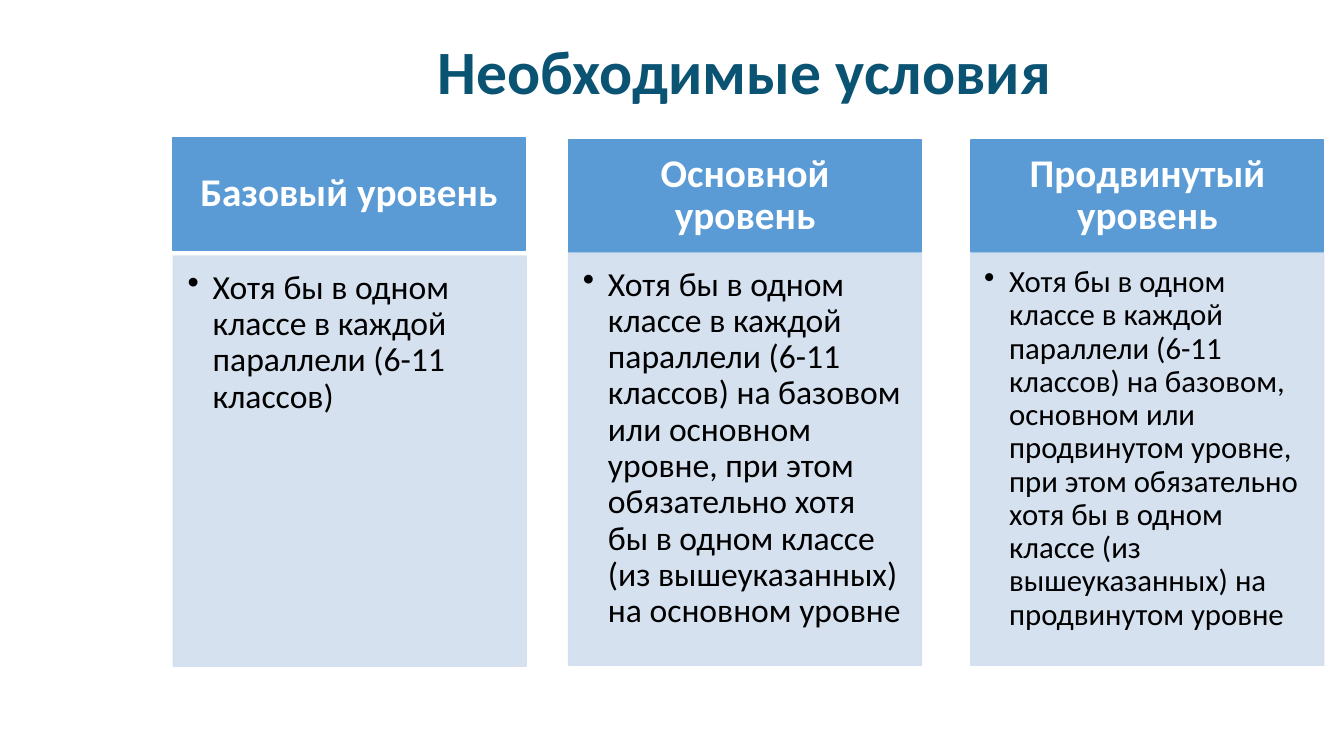
from pptx import Presentation
from pptx.dml.color import RGBColor
from pptx.enum.shapes import MSO_SHAPE
from pptx.enum.text import MSO_ANCHOR, PP_ALIGN
from pptx.oxml.ns import qn
from pptx.util import Inches, Pt
from lxml.etree import SubElement

TEAL = RGBColor(0x0A, 0x53, 0x73)
BLUE = RGBColor(0x5B, 0x9B, 0xD5)
PALE = RGBColor(0xD2, 0xDE, 0xEF)
WHITE = RGBColor(0xFF, 0xFF, 0xFF)
BLACK = RGBColor(0, 0, 0)

START = "Хотя бы в одном классе в каждой параллели (6-11 классов)"
MUST = "при этом обязательно хотя бы в одном классе (из вышеуказанных) на"
LEVELS = [
    ("Базовый уровень", START, (1.71, 1.37), (1.72, 2.54), 4.07, 24,
     (0.14, 0.14, 0.19, 0.21)),
    ("Основной уровень",
     f"{START} на базовом или основном уровне, {MUST} основном уровне",
     (5.64, 1.39), (5.64, 2.51), 4.09, 24, (0.14, 0.14, 0.19, 0.21)),
    ("Продвинутый уровень",
     f"{START} на базовом, основном или продвинутом уровне, {MUST} продвинутом уровне",
     (9.63, 1.39), (9.63, 2.51), 4.09, 22, (0.13, 0.13, 0.17, 0.19)),
]
WIDTH, HEAD = 3.5, 1.11


class Deck:
    """Draws the parts of the slide in one style."""

    face = "Calibri"

    def __init__(self):
        self.file = Presentation()
        self.file.slide_width = Inches(13.33)
        self.file.slide_height = Inches(7.5)
        self.slide = self.file.slides.add_slide(self.file.slide_layouts[6])

    def label(self, shape, text, size, color, bold, align, anchor, pad, bullet=False):
        frame = shape.text_frame
        frame.word_wrap = True
        frame.vertical_anchor = anchor
        (frame.margin_left, frame.margin_top,
         frame.margin_right, frame.margin_bottom) = map(Inches, pad)
        para = frame.paragraphs[0]
        para.text = text
        para.alignment = align
        para.line_spacing = 0.9
        if bullet:
            props = para._p.get_or_add_pPr()
            props.set("marL", str(Inches(0.25)))
            props.set("indent", str(Inches(-0.25)))
            SubElement(props, qn("a:buChar"), char="•")
        font = para.font
        font.name, font.size, font.bold = self.face, Pt(size), bold
        font.color.rgb = color

    def title(self, text, *place):
        box = self.slide.shapes.add_textbox(*map(Inches, place))
        self.label(box, text, 44, TEAL, True, PP_ALIGN.CENTER,
                   MSO_ANCHOR.MIDDLE, (0.1, 0.05, 0.1, 0.05))

    def block(self, color, *place):
        shape = self.slide.shapes.add_shape(MSO_SHAPE.RECTANGLE, *map(Inches, place))
        shape.shadow.inherit = False
        shape.fill.solid()
        shape.fill.fore_color.rgb = color
        shape.line.color.rgb = color
        shape.line.width = Pt(1)
        return shape

    def header(self, text, left, top):
        shape = self.block(BLUE, left, top, WIDTH, HEAD)
        self.label(shape, text, 28, WHITE, True, PP_ALIGN.CENTER,
                   MSO_ANCHOR.MIDDLE, (0.22, 0.12, 0.22, 0.12))

    def body(self, text, left, top, height, size, pad):
        shape = self.block(PALE, left, top, WIDTH, height)
        for tint in shape.element.spPr.iter(qn("a:srgbClr")):
            SubElement(tint, qn("a:alpha"), val="90000")
        self.label(shape, text, size, BLACK, False, PP_ALIGN.LEFT,
                   MSO_ANCHOR.TOP, pad, True)

    def save(self):
        self.file.save("out.pptx")


def main():
    deck = Deck()
    deck.title("Необходимые условия", 1.83, 0.09, 11.11, 1.29)
    for name, text, head, base, height, size, pad in LEVELS:
        deck.header(name, *head)
        deck.body(text, *base, height, size, pad)
    deck.save()


if __name__ == "__main__":
    main()
